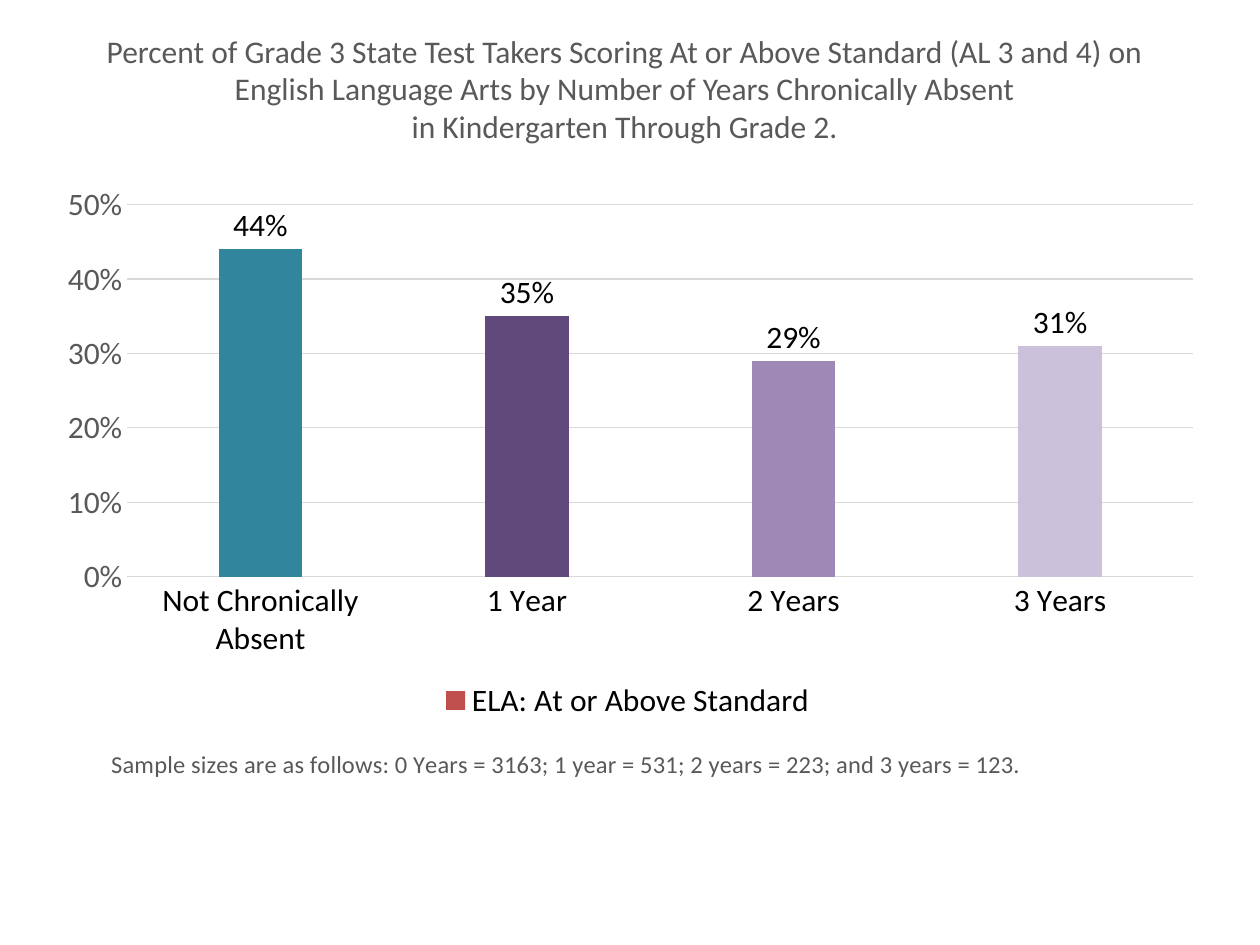
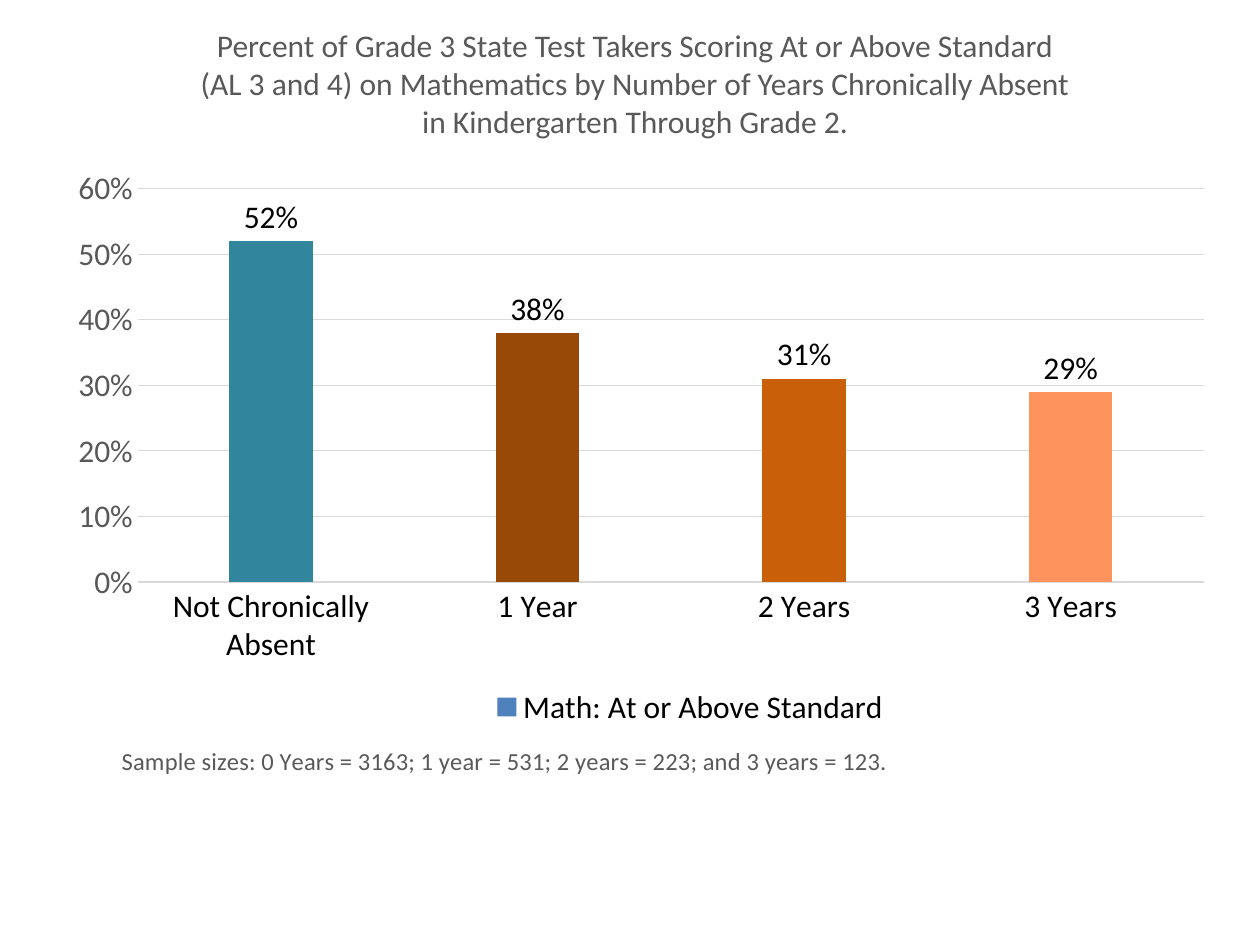
from lxml.etree import SubElement
from pptx import Presentation
from pptx.chart.data import CategoryChartData
from pptx.dml.color import RGBColor
from pptx.enum.chart import XL_CHART_TYPE as ChartType
from pptx.enum.chart import XL_LABEL_POSITION as LabelPosition
from pptx.enum.chart import XL_LEGEND_POSITION as LegendPosition
from pptx.enum.chart import XL_TICK_MARK as TickMark
from pptx.enum.text import MSO_ANCHOR as Anchor
from pptx.enum.text import PP_ALIGN as Align
from pptx.oxml.ns import qn
from pptx.util import Pt

BLACK = RGBColor(0x00, 0x00, 0x00)
GRAY = RGBColor(0x59, 0x59, 0x59)
GRID = RGBColor(0xD9, 0xD9, 0xD9)
TEAL = RGBColor(0x31, 0x85, 0x9C)
RED = RGBColor(0xC0, 0x50, 0x4D)
BLUE = RGBColor(0x4F, 0x81, 0xBD)
PURPLES = [RGBColor(0x60, 0x4A, 0x7B), RGBColor(0x9D, 0x88, 0xB6), RGBColor(0xCC, 0xC1, 0xDA)]
ORANGES = [RGBColor(0x98, 0x48, 0x07), RGBColor(0xC9, 0x60, 0x09), RGBColor(0xFF, 0x93, 0x5D)]

BODY = {"name": "Calibri", "size": Pt(18), "bold": False}
LABEL = {**BODY, "color": BLACK}
MUTED = {**BODY, "color": GRAY}
NOTE = {**MUTED, "size": Pt(14)}

YEARS_ABSENT = ["Not Chronically Absent", "1 Year", "2 Years", "3 Years"]
# Chart parts are placed as fractions of the chart: x, y, then w, h if sized.
SUBJECTS = [
    {
        "title": "Percent of Grade 3 State Test Takers Scoring At or Above Standard (AL 3 and 4) on "
                 "English Language Arts by Number of Years Chronically Absent\v"
                 "in Kindergarten Through Grade 2.",
        "note": "Sample sizes are as follows: 0 Years = 3163; 1 year = 531; 2 years = 223; and 3 years = 123.",
        "series": "ELA: At or Above Standard", "values": [0.44, 0.35, 0.29, 0.31],
        "legend_color": RED, "bar_colors": [TEAL, *PURPLES], "top_of_scale": 0.5,
        "chart_left": 12, "title_top": 15,
        "plot": (0.088, 0.242, 0.883, 0.49), "legend": (0.345, 0.87, 0.315, 0.05), "note_at": (0.071, 0.951),
    },
    {
        "title": "Percent of Grade 3 State Test Takers Scoring At or Above Standard\v"
                 "(AL 3 and 4) on Mathematics by Number of Years Chronically Absent\v"
                 "in Kindergarten Through Grade 2.",
        "note": "Sample sizes: 0 Years = 3163; 1 year = 531; 2 years = 223; and 3 years = 123.",
        "series": "Math: At or Above Standard", "values": [0.52, 0.38, 0.31, 0.29],
        "legend_color": BLUE, "bar_colors": [TEAL, *ORANGES], "top_of_scale": 0.6,
        "chart_left": 18, "title_top": 12,
        "plot": (0.088, 0.219, 0.883, 0.513), "legend": (0.378, 0.87, 0.335, 0.05), "note_at": (0.071, 0.938),
    },
]
CHART_TOP, CHART_WIDTH, CHART_HEIGHT = 12, 690, 438
TITLE_INDENT, TITLE_WIDTH, TITLE_HEIGHT = 21, 648, 90


def set_font(font, style):
    for key, value in style.items():
        if key == "color":
            font.color.rgb = value
        else:
            setattr(font, key, value)


def paint(fill, color):
    fill.solid()
    fill.fore_color.rgb = color


def rule(line):
    line.color.rgb = GRID
    line.width = Pt(0.75)


def place(parent, place_after, fractions, inner=False):
    """Give a chart part a manual layout, put after the named child (or first)."""
    for old in parent.findall(qn("c:layout")):
        parent.remove(old)
    layout = parent.makeelement(qn("c:layout"), {})
    if place_after:
        parent.find(qn(place_after)).addnext(layout)
    else:
        parent.insert(0, layout)
    manual = SubElement(layout, qn("c:manualLayout"))
    settings = [("layoutTarget", "inner")] if inner else []
    settings += [("xMode", "edge"), ("yMode", "edge"), *zip("xywh", fractions)]
    for tag, value in settings:
        SubElement(manual, qn(f"c:{tag}")).set("val", str(value))


def add_score_chart(page, subject):
    data = CategoryChartData(number_format="0%")
    data.categories = YEARS_ABSENT
    data.add_series(subject["series"], subject["values"])
    chart = page.shapes.add_chart(
        ChartType.COLUMN_CLUSTERED, Pt(subject["chart_left"]), Pt(CHART_TOP),
        Pt(CHART_WIDTH), Pt(CHART_HEIGHT), data).chart
    chart.has_title = False
    set_font(chart.font, LABEL)

    plot = chart.plots[0]
    plot.gap_width, plot.overlap, plot.vary_by_categories = 219, -27, False
    series = plot.series[0]
    paint(series.format.fill, subject["legend_color"])
    for index, color in enumerate(subject["bar_colors"]):
        paint(series.points[index].format.fill, color)
    plot.has_data_labels = True
    labels = plot.data_labels
    label_format = {"show_value": True, "position": LabelPosition.OUTSIDE_END,
                    "number_format": "0%", "number_format_is_linked": False}
    for key, value in label_format.items():
        setattr(labels, key, value)
    set_font(labels.font, LABEL)

    years, scores = chart.category_axis, chart.value_axis
    for axis, style in ((years, LABEL), (scores, MUTED)):
        axis.major_tick_mark = axis.minor_tick_mark = TickMark.NONE
        set_font(axis.tick_labels.font, style)
    rule(years.format.line)
    scores.format.line.fill.background()
    scores.minimum_scale, scores.maximum_scale, scores.major_unit = 0, subject["top_of_scale"], 0.1
    scores.has_major_gridlines = True
    rule(scores.major_gridlines.format.line)
    scores.tick_labels.number_format = "0%"
    scores.tick_labels.number_format_is_linked = False

    years.has_title = True
    note = years.axis_title
    note.text_frame.text = subject["note"]
    set_font(note.text_frame.paragraphs[0].runs[0].font, NOTE)

    chart.has_legend = True
    legend = chart.legend
    legend.position, legend.include_in_layout = LegendPosition.BOTTOM, False
    set_font(legend.font, LABEL)

    place(plot._element.getparent(), None, subject["plot"], inner=True)
    place(legend._element, "c:legendPos", subject["legend"])
    place(note._element, "c:tx", subject["note_at"])


def add_title(page, subject):
    box = page.shapes.add_textbox(
        Pt(subject["chart_left"] + TITLE_INDENT), Pt(subject["title_top"]),
        Pt(TITLE_WIDTH), Pt(TITLE_HEIGHT))
    frame = box.text_frame
    frame.word_wrap, frame.vertical_anchor, frame.margin_top = True, Anchor.TOP, Pt(3)
    para = frame.paragraphs[0]
    para.text = subject["title"]
    para.alignment = Align.CENTER
    for span in para.runs:
        set_font(span.font, MUTED)


def main():
    deck = Presentation()
    deck.slide_width, deck.slide_height = Pt(720), Pt(540)
    for subject in SUBJECTS:
        page = deck.slides.add_slide(deck.slide_layouts[6])
        add_score_chart(page, subject)
        add_title(page, subject)
    deck.save("out.pptx")


if __name__ == "__main__":
    main()
